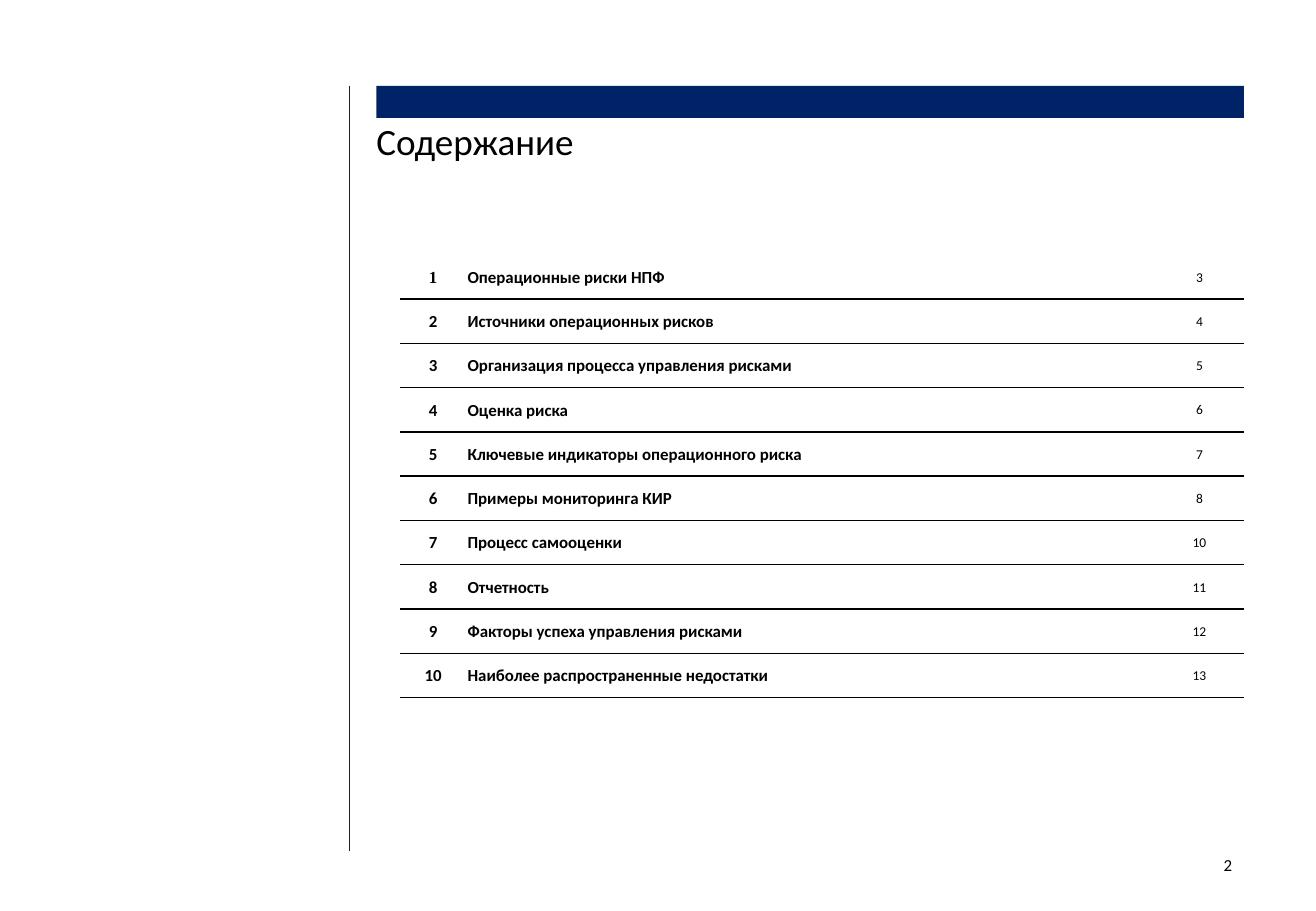
from lxml import etree
from pptx import Presentation
from pptx import util as u
from pptx.dml.color import RGBColor
from pptx.enum import shapes, text
from pptx.oxml import ns

COLORS = {"navy": "002368", "black": "000000", "white": "FFFFFF"}
ALIGN = text.PP_ALIGN
CONTENTS = [
    ("Операционные риски НПФ", 3),
    ("Источники операционных рисков", 4),
    ("Организация процесса управления рисками", 5),
    ("Оценка риска", 6),
    ("Ключевые индикаторы операционного риска", 7),
    ("Примеры мониторинга КИР", 8),
    ("Процесс самооценки", 10),
    ("Отчетность", 11),
    ("Факторы успеха управления рисками", 12),
    ("Наиболее распространенные недостатки", 13),
]


def rgb(name):
    return RGBColor.from_string(COLORS[name])


def write(tf, words, size, align, bold=False, font="Calibri"):
    tf.text = words
    p = tf.paragraphs[0]
    p.alignment = align
    f = p.runs[0].font
    f.name, f.size, f.bold = font, u.Pt(size), bold
    f.color.rgb = rgb("black")


def add_text(s, box, words, size, align, inset_x=0, inset_y=0):
    tf = s.shapes.add_textbox(*map(u.Pt, box)).text_frame
    tf.word_wrap = True
    tf.margin_left = tf.margin_right = u.Pt(inset_x)
    tf.margin_top = tf.margin_bottom = u.Pt(inset_y)
    write(tf, words, size, align)


def set_border(cell, side, color):
    ln = etree.SubElement(cell._tc.get_or_add_tcPr(), ns.qn(f"a:ln{side}"), w=str(u.Pt(1)))
    if color:
        fill = etree.SubElement(ln, ns.qn("a:solidFill"))
        etree.SubElement(fill, ns.qn("a:srgbClr"), val=COLORS[color])
    else:
        etree.SubElement(ln, ns.qn("a:noFill"))


def add_frame(s, box):
    x, y, w, h = box
    rule = s.shapes.add_connector(
        shapes.MSO_CONNECTOR.STRAIGHT, u.Pt(x), u.Pt(y), u.Pt(x), u.Pt(y + h))
    rule.line.color.rgb = rgb("navy")
    rule.line.width = u.Pt(0.75)
    etree.SubElement(rule._element.spPr, ns.qn("a:effectLst"))
    bar = s.shapes.add_shape(
        shapes.MSO_SHAPE.RECTANGLE, u.Pt(x + 16), u.Pt(y), u.Pt(w - 16), u.Pt(19))
    bar.shadow.inherit = False
    bar.fill.solid()
    bar.fill.fore_color.rgb = rgb("navy")
    bar.line.fill.background()
    add_text(s, (x + 16, y + 19, w - 16, 28), "Содержание", 22, ALIGN.LEFT)
    add_text(s, (x + w - 57, y + h - 1.5, 57, 36), "2", 10, ALIGN.RIGHT, 7.2, 3.6)


def add_contents(s, box):
    x, y, w, h = box
    table = s.shapes.add_table(len(CONTENTS), 3, *map(u.Pt, box)).table
    table.first_row = table.horz_banding = False
    for col, width in zip(table.columns, (39.6, w - 92.2, 52.6)):
        col.width = u.Pt(width)
    for i, (title, page) in enumerate(CONTENTS):
        table.rows[i].height = u.Pt(h / len(CONTENTS))
        columns = (
            (str(i + 1), 10, ALIGN.CENTER, True, "Calibri" if i else "Times New Roman"),
            (title, 10, ALIGN.LEFT, True),
            (str(page), 8, ALIGN.CENTER),
        )
        for cell, content in zip(table.rows[i].cells, columns):
            cell.margin_left = cell.margin_right = cell.margin_top = u.Pt(0.7)
            cell.margin_bottom = 0
            cell.vertical_anchor = text.MSO_ANCHOR.MIDDLE
            write(cell.text_frame, *content)
            for side, color in zip("LRTB", (None, None, "black" if i else None, "black")):
                set_border(cell, side, color)
            cell.fill.solid()
            cell.fill.fore_color.rgb = rgb("white")


def main():
    prs = Presentation()
    prs.slide_width, prs.slide_height = u.Pt(780), u.Pt(540)
    s = prs.slides.add_slide(prs.slide_layouts[6])
    add_frame(s, (207.1, 51, 530.2, 453.5))
    add_contents(s, (236.9, 151, 500.4, 262.5))
    prs.save("out.pptx")


if __name__ == "__main__":
    main()
